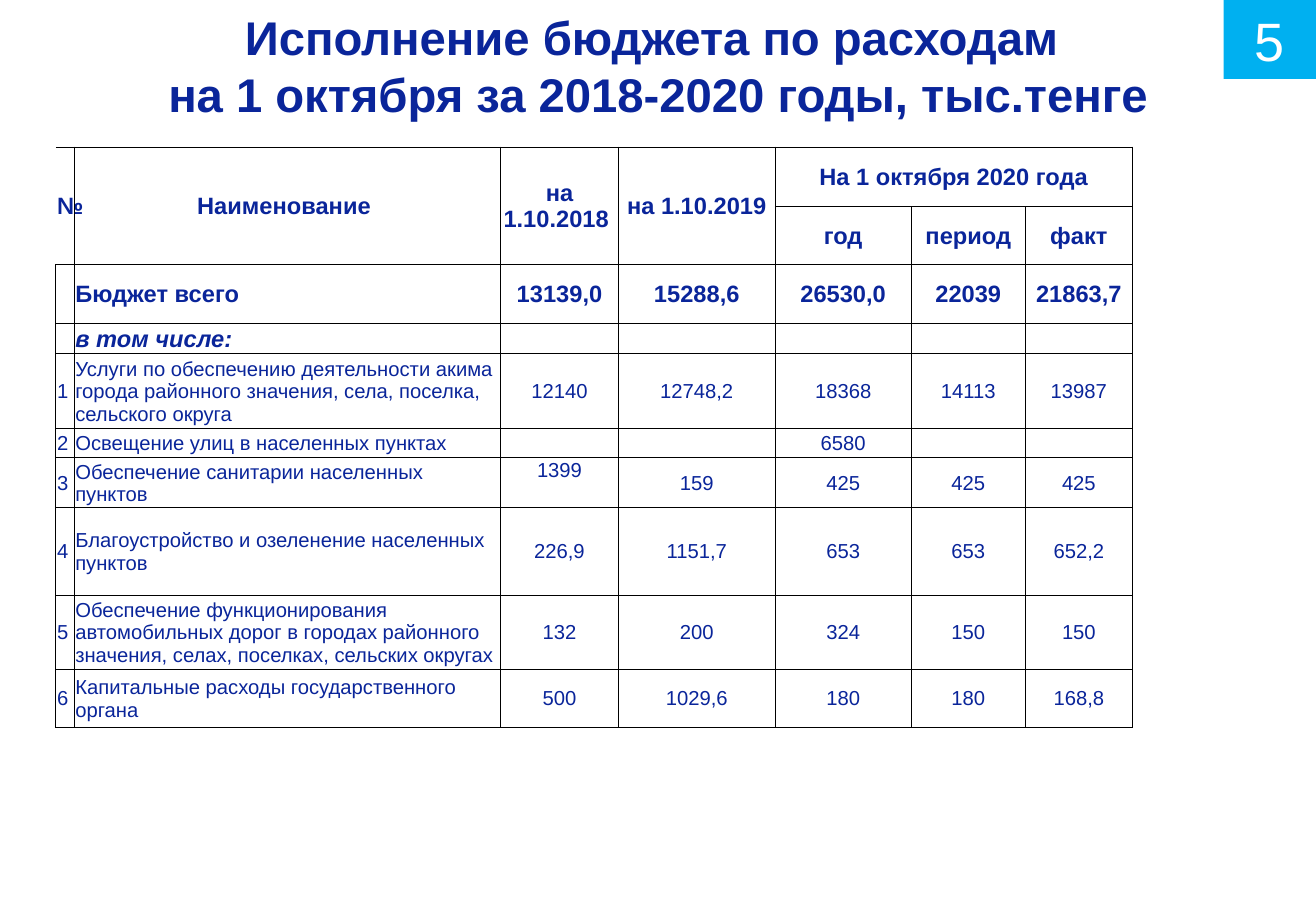
from lxml.etree import SubElement
from pptx import Presentation
from pptx.dml.color import RGBColor
from pptx.enum.shapes import MSO_SHAPE
from pptx.enum.text import MSO_ANCHOR as ANCHOR, PP_ALIGN as ALIGN
from pptx.oxml.ns import qn
from pptx.util import Inches, Pt

NAVY, CYAN, WHITE, BLACK = "0A259A", "00B0F0", "FFFFFF", "000000"

TITLE = "Исполнение бюджета по расходам \vна 1 октября за 2018-2020 годы, тыс.тенге"
PAGE = "5"

HEADER = [
    ["№", "Наименование ", "на 1.10.2018 ", "на 1.10.2019", "На 1 октября 2020 года", "", ""],
    ["", "", "", "", "год", "период", "факт"],
]
TOTALS = [
    ["", "Бюджет всего", "13139,0", "15288,6", "26530,0", "22039", "21863,7"],
    ["", "в том числе:", "", "", "", "", ""],
]
ITEMS = [
    ["1", "Услуги по обеспечению деятельности акима города районного значения, "
          "села, поселка, сельского округа", "12140", "12748,2", "18368", "14113", "13987"],
    ["2", "Освещение улиц в населенных пунктах", "", "", "6580", "", ""],
    ["3", "Обеспечение санитарии населенных пунктов", "1399", "159", "425", "425", "425"],
    ["4", "Благоустройство и озеленение населенных пунктов",
     "226,9", "1151,7", "653", "653", "652,2"],
    ["5", "Обеспечение функционирования автомобильных дорог в городах районного "
          "значения, селах, поселках, сельских округах", "132", "200", "324", "150", "150"],
    ["6", "Капитальные расходы государственного органа",
     "500", "1029,6", "180", "180", "168,8"],
]
ROWS = HEADER + TOTALS + ITEMS
COL_WIDTHS = [0.15, 3.51, 0.97, 1.29, 1.12, 0.94, 0.88]
ROW_HEIGHTS = [0.49, 0.48, 0.48, 0.25, 0.62, 0.24, 0.41, 0.72, 0.61, 0.48]
MERGES = [((0, c), (1, c)) for c in range(4)] + [((0, 4), (0, 6))]
SUBHEAD_ROW = 3
TOP_ALIGNED = (6, 2)


def rgb(value):
    return RGBColor.from_string(value)


def write(tf, text, size=12, color=NAVY, bold=False, italic=False, align=ALIGN.CENTER):
    tf.text = text
    p = tf.paragraphs[0]
    p.alignment = align
    if not text:  # keeps an empty cell from stretching its row
        SubElement(p._p, qn("a:endParaRPr"), sz=str(size * 100))
    for r in p.runs:
        f = r.font
        f.name, f.size, f.bold, f.italic = "Arial", Pt(size), bold, italic
        f.color.rgb = rgb(color)
    return p


def set_borders(cell, sides):
    tcPr = cell._tc.get_or_add_tcPr()
    for side in "LRTB":
        ln = SubElement(tcPr, qn(f"a:ln{side}"), w=str(Pt(0.5)))
        if side in sides:
            fill = SubElement(ln, qn("a:solidFill"))
            SubElement(fill, qn("a:srgbClr"), val=BLACK)
        else:
            SubElement(ln, qn("a:noFill"))


def add_title(slide):
    s = slide.shapes.title
    s.left, s.top, s.width, s.height = map(Inches, (0, 0, 10.83, 1.07))
    tf = s.text_frame
    tf.margin_left = tf.margin_right = tf.margin_top = tf.margin_bottom = Inches(0.05)
    tf.vertical_anchor = ANCHOR.MIDDLE
    write(tf, TITLE, size=28, bold=True).line_spacing = Pt(34)


def add_budget_table(slide):
    table = slide.shapes.add_table(
        len(ROWS), len(COL_WIDTHS), Inches(0.46), Inches(1.21),
        Inches(sum(COL_WIDTHS)), Inches(sum(ROW_HEIGHTS))).table
    table.first_row = table.horz_banding = False
    for col, width in zip(table.columns, COL_WIDTHS):
        col.width = Inches(width)
    for row, height in zip(table.rows, ROW_HEIGHTS):
        row.height = Inches(height)
    for first, last in MERGES:
        table.cell(*first).merge(table.cell(*last))

    for i, values in enumerate(ROWS):
        in_header = i < len(HEADER)
        bold = i <= SUBHEAD_ROW
        for j, text in enumerate(values):
            cell = table.cell(i, j)
            set_borders(cell, "RTB" if in_header and j == 0 else "LRTB")
            cell.fill.background()
            cell.margin_left = cell.margin_right = cell.margin_top = Inches(0.01)
            cell.margin_bottom = 0
            cell.vertical_anchor = ANCHOR.TOP if (i, j) == TOP_ALIGNED else ANCHOR.MIDDLE
            write(cell.text_frame, text, size=14 if bold and text else 12, bold=bold,
                  italic=i == SUBHEAD_ROW,
                  align=ALIGN.CENTER if in_header or j > 1 else ALIGN.LEFT)


def add_page_badge(slide):
    s = slide.shapes.add_shape(MSO_SHAPE.RECTANGLE, *map(Inches, (10.07, 0, 0.76, 0.65)))
    s.shadow.inherit = False
    s.fill.solid()
    s.fill.fore_color.rgb = rgb(CYAN)
    s.line.fill.background()
    s.text_frame.vertical_anchor = ANCHOR.MIDDLE
    write(s.text_frame, PAGE, size=32, color=WHITE)


def main():
    prs = Presentation()
    prs.slide_width, prs.slide_height = Inches(10.83), Inches(7.5)
    slide = prs.slides.add_slide(prs.slide_layouts[5])
    add_title(slide)
    add_budget_table(slide)
    add_page_badge(slide)
    prs.save("out.pptx")


if __name__ == "__main__":
    main()
